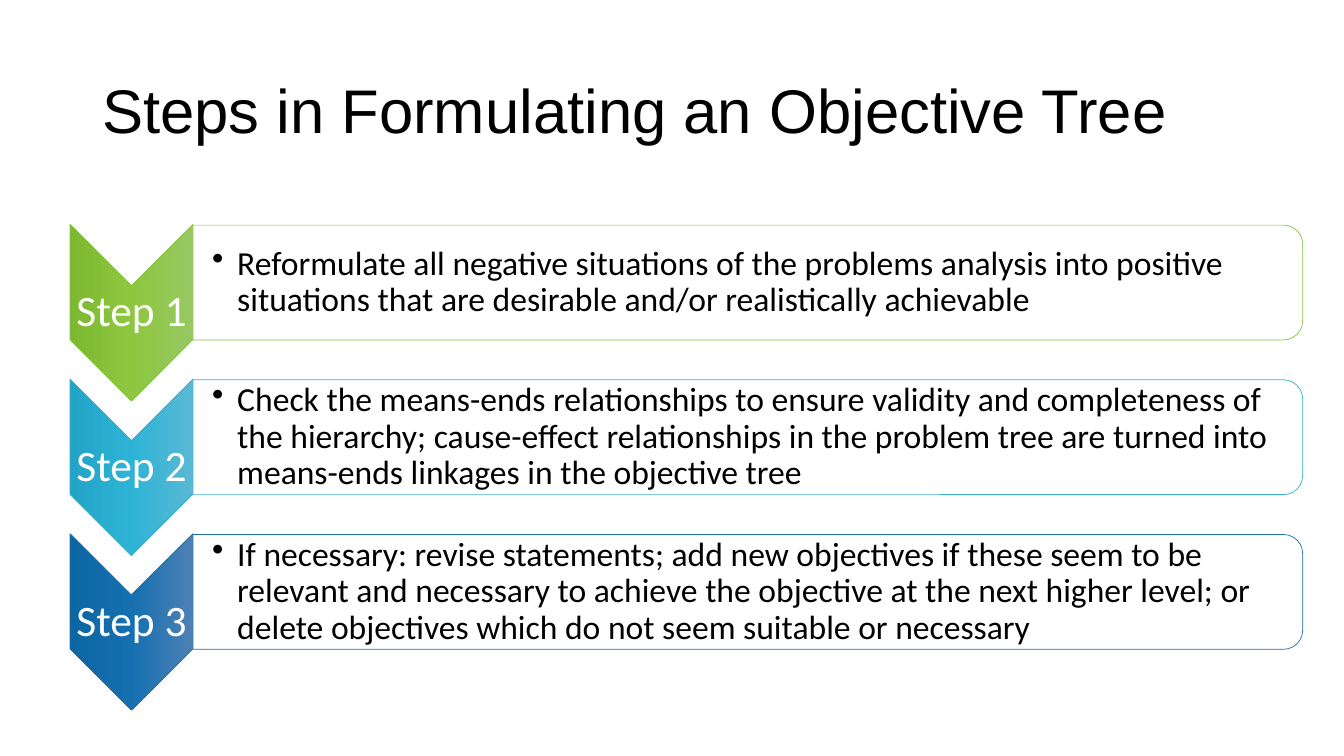
from lxml import etree
from pptx import Presentation
from pptx.dml.color import RGBColor
from pptx.enum.shapes import MSO_SHAPE as Shape
from pptx.enum.text import MSO_ANCHOR as Anchor, PP_ALIGN as Align
from pptx.oxml.ns import qn
from pptx.util import Pt

COLORS = {"text": "000000", "label": "FFFFFF", "panel": "FFFFFF"}

# (label, line colour, gradient stops from top to bottom, description)
STEPS = [
    ("Step 1", "8BC145", ("98C862", "8CC73F", "7DB831"),
     "Reformulate all negative situations of the problems analysis into "
     "positive situations that are desirable and/or realistically achievable"),
    ("Step 2", "36AFCE", ("59B8D4", "2EB3D6", "21A4C6"),
     "Check the means-ends relationships to ensure validity and completeness "
     "of the hierarchy; cause-effect relationships in the problem tree are "
     "turned into means-ends linkages in the objective tree"),
    ("Step 3", "1D6FA9", ("4E80B5", "1670B0", "0D65A3"),
     "If necessary: revise statements; add new objectives if these seem to be "
     "relevant and necessary to achieve the objective at the next higher "
     "level; or delete objectives which do not seem suitable or necessary"),
]

CHEVRON_WIDTH, CHEVRON_HEIGHT = 87.8, 126
PANEL_HEIGHT = 82
STEP_PITCH = 110.5


def add_text(slide, box, text, font, size, color, insets):
    """Add a vertically centred text box and return its paragraph."""
    text_box = slide.shapes.add_textbox(*map(Pt, box))
    frame = text_box.text_frame
    frame.word_wrap = True
    frame.vertical_anchor = Anchor.MIDDLE
    frame.margin_left, frame.margin_top, frame.margin_right, frame.margin_bottom = map(Pt, insets)
    paragraph = frame.paragraphs[0]
    paragraph.text = text
    paragraph.line_spacing = 0.9
    paragraph.font.name = font
    paragraph.font.size = Pt(size)
    paragraph.font.color.rgb = RGBColor.from_string(color)
    return paragraph


def add_turned_shape(slide, kind, box, line_color):
    """Add a shape turned by 90 degrees that visibly fills the box."""
    left, top, width, height = box
    shape = slide.shapes.add_shape(
        kind, Pt(left + (width - height) / 2), Pt(top + (height - width) / 2),
        Pt(height), Pt(width))
    shape.rotation = 90
    shape.shadow.inherit = False
    shape.line.color.rgb = RGBColor.from_string(line_color)
    shape.line.width = Pt(0.5)
    return shape


def fill_gradient(shape, stops):
    """Fill with evenly spaced colour stops."""
    shape.fill.gradient()
    shape.fill.gradient_angle = 270
    stop_list = shape._element.spPr.find(qn("a:gradFill")).find(qn("a:gsLst"))
    for old_stop in list(stop_list):
        stop_list.remove(old_stop)
    for index, color in enumerate(stops):
        position = 100000 * index // (len(stops) - 1)
        stop = etree.SubElement(stop_list, qn("a:gs"), pos=str(position))
        etree.SubElement(stop, qn("a:srgbClr"), val=color)


def add_bullet(paragraph, indent):
    properties = paragraph._p.get_or_add_pPr()
    properties.set("marL", str(Pt(indent)))
    properties.set("indent", str(-Pt(indent)))
    etree.SubElement(properties, qn("a:buChar"), char="•")
    # The bullet must precede the default run properties.
    defaults = properties.find(qn("a:defRPr"))
    if defaults is not None:
        properties.append(defaults)


def add_title(slide, box):
    add_text(slide, box, "Steps in Formulating an Objective Tree", "Arial", 44,
             COLORS["text"], (7.2, 3.6, 7.2, 3.6))


def add_step(slide, box, label, line_color, stops, description):
    left, top, width, height = box
    chevron = add_turned_shape(
        slide, Shape.CHEVRON, (left, top, CHEVRON_WIDTH, height), line_color)
    fill_gradient(chevron, stops)
    label_paragraph = add_text(
        slide, (left, top + CHEVRON_WIDTH / 2, CHEVRON_WIDTH, height - CHEVRON_WIDTH),
        label, "Calibri", 31, COLORS["label"], (1.4,) * 4)
    label_paragraph.alignment = Align.CENTER

    panel_left = left + CHEVRON_WIDTH
    panel_width = width - CHEVRON_WIDTH
    panel = add_turned_shape(
        slide, Shape.ROUND_2_SAME_RECTANGLE,
        (panel_left, top + 0.5, panel_width, PANEL_HEIGHT), line_color)
    panel.fill.solid()
    panel.fill.fore_color.rgb = RGBColor.from_string(COLORS["panel"])
    description_paragraph = add_text(
        slide, (panel_left, top + 4.5, panel_width - 4, PANEL_HEIGHT - 8),
        description, "Calibri", 24, COLORS["text"], (13.7, 1.4, 1.4, 1.4))
    add_bullet(description_paragraph, 18)


def add_steps(slide, left, top, width):
    for index, step in enumerate(STEPS):
        add_step(slide, (left, top + index * STEP_PITCH, width, CHEVRON_HEIGHT), *step)


def main():
    presentation = Presentation()
    presentation.slide_width, presentation.slide_height = Pt(960), Pt(540)
    slide = presentation.slides.add_slide(presentation.slide_layouts[6])
    add_title(slide, (66, 28.8, 828, 104.4))
    add_steps(slide, 50, 160.3, 880.5)
    presentation.save("out.pptx")


if __name__ == "__main__":
    main()
